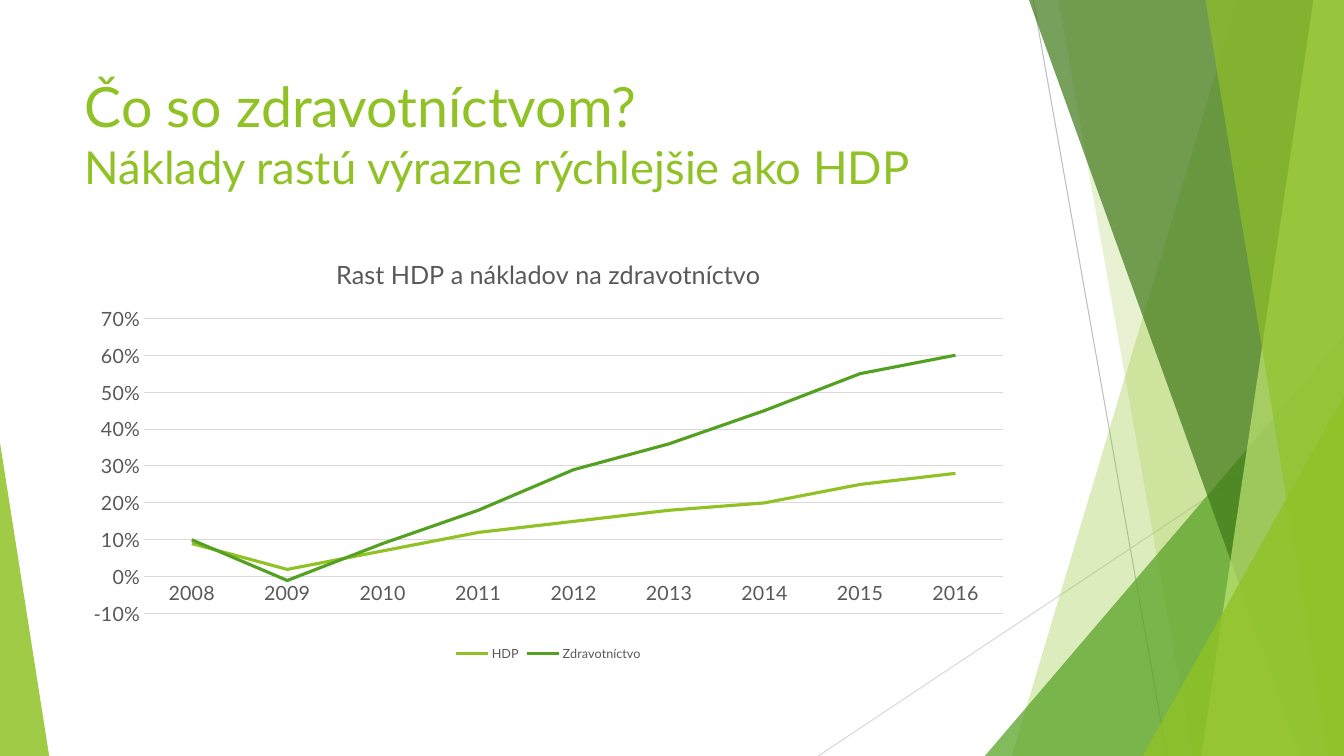
from dataclasses import dataclass

from lxml.etree import SubElement
from pptx import Presentation
from pptx.chart.data import CategoryChartData
from pptx.dml.color import RGBColor
from pptx.enum.chart import XL_CHART_TYPE as ChartType
from pptx.enum.chart import XL_LEGEND_POSITION as LegendPosition
from pptx.enum.chart import XL_TICK_MARK as TickMark
from pptx.enum.shapes import MSO_CONNECTOR as Connector
from pptx.enum.shapes import MSO_SHAPE as Shape
from pptx.enum.text import MSO_ANCHOR as Anchor
from pptx.enum.text import MSO_AUTO_SIZE as AutoSize
from pptx.enum.text import PP_ALIGN as Align
from pptx.oxml.ns import qn
from pptx.util import Cm, Pt

WIDTH, HEIGHT = 33.87, 19.05
FONT = "Lato"
LIME, GREEN, DARK_GREEN, PALE_LIME = "90C226", "54A021", "3F7819", "C0E474"
TEXT_GREY, GRID_GREY, RAY_GREY = "595959", "D9D9D9", "BFBFBF"


@dataclass
class Ray:
    start: tuple[float, float]
    end: tuple[float, float]
    color: str


@dataclass
class Facet:
    """Full-height band between a slanted left edge and the right slide edge."""
    top_x: float
    bottom_x: float
    color: str
    opacity: int


@dataclass
class Corner:
    """Triangle standing on the bottom edge, its apex at 0 (left) or 1 (right)."""
    left: float
    top: float
    width: float
    apex: int
    color: str
    opacity: int


RAYS = [
    Ray((26.04, 0), (29.41, HEIGHT), RAY_GREY),
    Ray((WIDTH, 10.24), (20.62, HEIGHT), GRID_GREY),
]
PANES = [
    Facet(31.19, 25.5, LIME, 30),
    Facet(26.67, 30.05, LIME, 20),
    Corner(24.82, 8.46, 9.05, 1, GREEN, 72),
    Facet(25.93, 32.79, DARK_GREEN, 70),
    Facet(33.1, 30.28, PALE_LIME, 70),
    Facet(30.38, 33.48, LIME, 65),
    Corner(28.8, 9.98, 5.07, 1, LIME, 80),
    Corner(0, 11.15, 1.24, 0, LIME, 85),
]

YEARS = [str(year) for year in range(2008, 2017)]
GROWTH = {
    "HDP": (LIME, [0.09, 0.02, 0.07, 0.12, 0.15, 0.18, 0.2, 0.25, 0.28]),
    "Zdravotníctvo": (GREEN, [0.01, -0.03, 0.02, 0.06, 0.14, 0.18, 0.25, 0.3, 0.32]),
}


def rgb(color: str) -> RGBColor:
    return RGBColor.from_string(color)


def style_font(font, size: float, color: str) -> None:
    font.name, font.size, font.bold = FONT, Pt(size), False
    font.color.rgb = rgb(color)


def style_line(line, color: str, width: float) -> None:
    line.color.rgb = rgb(color)
    line.width = Pt(width)


def draw_ray(slide, ray: Ray) -> None:
    connector = slide.shapes.add_connector(
        Connector.STRAIGHT, *map(Cm, ray.start + ray.end))
    style_line(connector.line, ray.color, 0.75)
    SubElement(connector.element.spPr, qn("a:effectLst"))


def draw_pane(slide, pane: Facet | Corner) -> None:
    if isinstance(pane, Facet):
        builder = slide.shapes.build_freeform(Cm(pane.top_x), 0)
        builder.add_line_segments(
            [(Cm(WIDTH), 0), (Cm(WIDTH), Cm(HEIGHT)), (Cm(pane.bottom_x), Cm(HEIGHT))])
        glass = builder.convert_to_shape()
    else:
        glass = slide.shapes.add_shape(
            Shape.ISOSCELES_TRIANGLE, Cm(pane.left), Cm(pane.top),
            Cm(pane.width), Cm(HEIGHT - pane.top))
        glass.adjustments[0] = pane.apex
    glass.shadow.inherit = False
    glass.line.fill.background()
    glass.fill.solid()
    glass.fill.fore_color.rgb = rgb(pane.color)
    tint = glass.element.spPr.find(f".//{qn('a:srgbClr')}")
    SubElement(tint, qn("a:alpha"), val=str(pane.opacity * 1000))


def write_title(slide) -> None:
    title = slide.shapes.title
    title.left, title.top, title.width, title.height = map(Cm, (1.88, 1.7, 23.88, 3.66))
    frame = title.text_frame
    frame.text = "Čo so zdravotníctvom?\vNáklady rastú výrazne rýchlejšie ako HDP"
    frame.word_wrap = True
    frame.auto_size = AutoSize.NONE
    frame.vertical_anchor = Anchor.TOP
    heading = frame.paragraphs[0]
    heading.alignment = Align.LEFT
    for run, size in zip(heading.runs, (39.6, 32.4)):
        style_font(run.font, size, LIME)


def draw_growth_chart(slide) -> None:
    growth = CategoryChartData(number_format="0%")
    growth.categories = YEARS
    for name, (_, values) in GROWTH.items():
        growth.add_series(name, values)
    chart = slide.shapes.add_chart(
        ChartType.LINE_STACKED, Cm(1.88), Cm(6), Cm(23.88), Cm(10.77), growth).chart
    style_font(chart.font, 10, "000000")

    chart.has_title = True
    caption = chart.chart_title
    caption.include_in_layout = False
    caption.text_frame.text = "Rast HDP a nákladov na zdravotníctvo"
    style_font(caption.text_frame.paragraphs[0].runs[0].font, 18, TEXT_GREY)

    chart.has_legend = True
    chart.legend.position = LegendPosition.BOTTOM
    chart.legend.include_in_layout = False
    style_font(chart.legend.font, 9, TEXT_GREY)

    years, percents = chart.category_axis, chart.value_axis
    for axis in (years, percents):
        axis.major_tick_mark = axis.minor_tick_mark = TickMark.NONE
        style_font(axis.tick_labels.font, 14, TEXT_GREY)
    style_line(years.format.line, GRID_GREY, 0.75)
    percents.format.line.fill.background()
    percents.has_major_gridlines = True
    style_line(percents.major_gridlines.format.line, GRID_GREY, 0.75)
    percents.minimum_scale, percents.maximum_scale = -0.1, 0.7
    percents.major_unit = 0.1
    percents.tick_labels.number_format = "0%"
    percents.tick_labels.number_format_is_linked = False

    plot = chart.plots[0]
    plot.vary_by_categories = False
    for series, (color, _) in zip(plot.series, GROWTH.values()):
        series.smooth = False
        style_line(series.format.line, color, 2.25)


def main() -> None:
    deck = Presentation()
    deck.slide_width, deck.slide_height = Cm(WIDTH), Cm(HEIGHT)
    slide = deck.slides.add_slide(deck.slide_layouts.get_by_name("Title Only"))
    for ray in RAYS:
        draw_ray(slide, ray)
    for pane in PANES:
        draw_pane(slide, pane)
    write_title(slide)
    draw_growth_chart(slide)
    deck.save("out.pptx")


if __name__ == "__main__":
    main()
